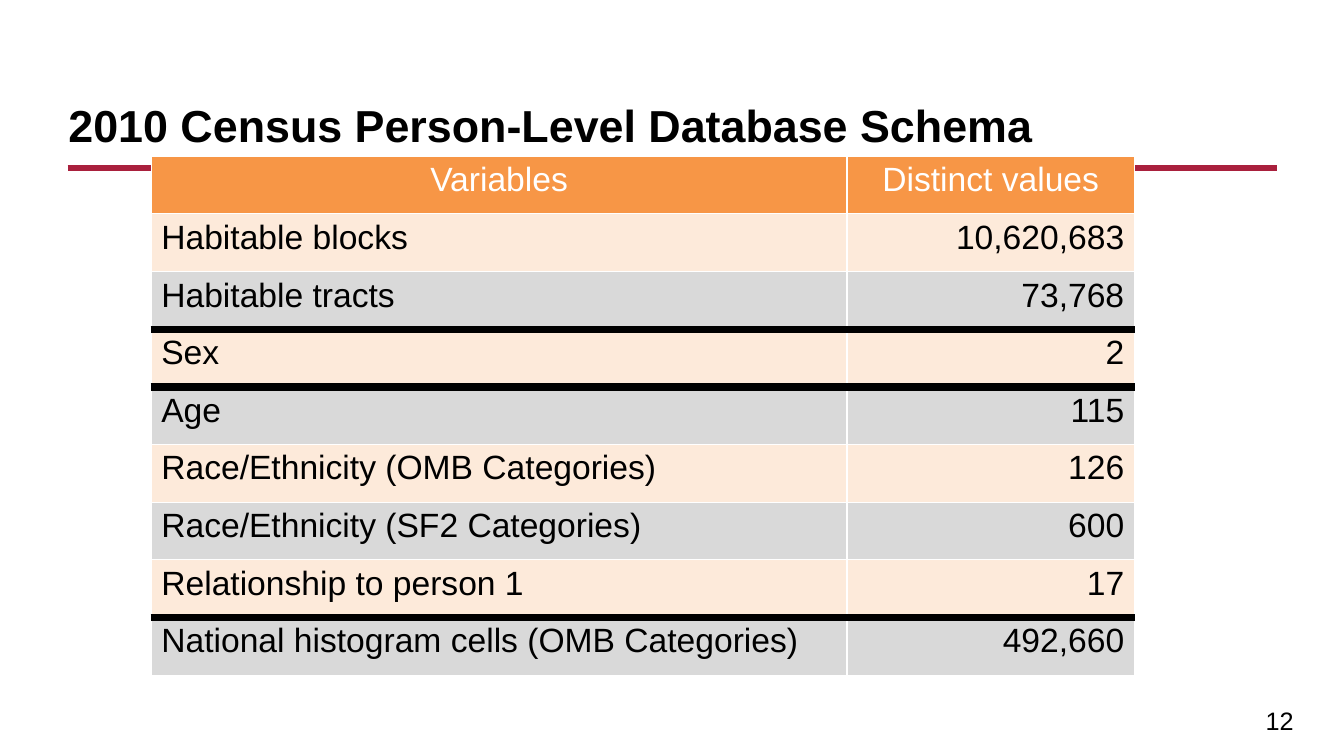
from dataclasses import dataclass

from lxml.etree import SubElement
from pptx import Presentation
from pptx.dml.color import RGBColor
from pptx.enum.shapes import MSO_CONNECTOR
from pptx.enum.text import MSO_ANCHOR, PP_ALIGN
from pptx.oxml.ns import qn
from pptx.slide import Slide
from pptx.table import _Cell
from pptx.text.text import TextFrame
from pptx.util import Inches, Pt


@dataclass(frozen=True)
class Theme:
    font: str = "Arial"
    title_size: int = 32
    table_size: int = 24
    number_size: int = 18
    black: str = "000000"
    white: str = "FFFFFF"
    crimson: str = "A9203D"
    orange: str = "F79646"
    peach: str = "FDEADA"
    gray: str = "D9D9D9"
    grid_width: float = 1
    divider_width: float = 6


@dataclass(frozen=True)
class Variable:
    name: str
    distinct_values: str
    divider_below: bool = False


THEME = Theme()
VARIABLES = [
    Variable("Habitable blocks", "10,620,683"),
    Variable("Habitable tracts", "73,768", divider_below=True),
    Variable("Sex", "2", divider_below=True),
    Variable("Age", "115"),
    Variable("Race/Ethnicity (OMB Categories)", "126"),
    Variable("Race/Ethnicity (SF2 Categories)", "600"),
    Variable("Relationship to person 1", "17", divider_below=True),
    Variable("National histogram cells (OMB Categories)", "492,660"),
]


def write(frame: TextFrame, text: str, size: int, color: str = THEME.black,
          align: PP_ALIGN = PP_ALIGN.LEFT, bold: bool = False) -> None:
    para = frame.paragraphs[0]
    para.text = text
    para.alignment = align
    para.font.name = THEME.font
    para.font.size = Pt(size)
    para.font.bold = bold
    para.font.color.rgb = RGBColor.from_string(color)


def add_text(page: Slide, left: float, top: float, width: float, height: float,
             anchor: MSO_ANCHOR) -> TextFrame:
    box = page.shapes.add_textbox(Inches(left), Inches(top), Inches(width), Inches(height))
    frame = box.text_frame
    frame.word_wrap = True
    frame.vertical_anchor = anchor
    return frame


def set_border(cell: _Cell, side: str, divider: bool = False) -> None:
    width = THEME.divider_width if divider else THEME.grid_width
    color = THEME.black if divider else THEME.white
    line = SubElement(cell._tc.get_or_add_tcPr(), qn(f"a:ln{side}"), w=str(Pt(width)))
    fill = SubElement(line, qn("a:solidFill"))
    SubElement(fill, qn("a:srgbClr"), val=color)


def style_cell(cell: _Cell, fill: str, divider_above: bool, divider_below: bool) -> None:
    set_border(cell, "L")
    set_border(cell, "R")
    set_border(cell, "T", divider_above)
    set_border(cell, "B", divider_below)
    cell.fill.solid()
    cell.fill.fore_color.rgb = RGBColor.from_string(fill)


def add_title_rule(page: Slide) -> None:
    rule = page.shapes.add_connector(
        MSO_CONNECTOR.STRAIGHT, Inches(0.67), Inches(1.67), Inches(12.67), Inches(1.67))
    rule.line.color.rgb = RGBColor.from_string(THEME.crimson)
    rule.line.width = Pt(4.5)
    SubElement(rule._element.spPr, qn("a:effectLst"))


def add_schema_table(page: Slide) -> None:
    rows = [Variable("Variables", "Distinct values"), *VARIABLES]
    table = page.shapes.add_table(
        len(rows), 2, Inches(1.5), Inches(1.55), Inches(9.75), Inches(5.15)).table
    for column, width in zip(table.columns, (6.9, 2.85)):
        column.width = Inches(width)

    divider_above = False
    for index, row in enumerate(rows):
        header = index == 0
        fill = THEME.orange if header else (THEME.gray, THEME.peach)[index % 2]
        color = THEME.white if header else THEME.black
        aligns = (PP_ALIGN.CENTER,) * 2 if header else (PP_ALIGN.LEFT, PP_ALIGN.RIGHT)
        texts = (row.name, row.distinct_values)
        for column, (text, align) in enumerate(zip(texts, aligns)):
            cell = table.cell(index, column)
            style_cell(cell, fill, divider_above, row.divider_below)
            write(cell.text_frame, text, THEME.table_size, color, align)
        divider_above = row.divider_below


def main() -> None:
    deck = Presentation()
    deck.slide_width, deck.slide_height = Inches(13.33), Inches(7.5)
    page = deck.slides.add_slide(deck.slide_layouts[6])

    # Title and the rule beneath it
    add_title_rule(page)
    title = add_text(page, 0.58, 0.3, 12.08, 1.25, MSO_ANCHOR.BOTTOM)
    write(title, "2010 Census Person-Level Database Schema", THEME.title_size, bold=True)

    # Schema table
    add_schema_table(page)

    # Page number
    number = add_text(page, 10.1, 6.95, 2.83, 0.39, MSO_ANCHOR.TOP)
    write(number, "12", THEME.number_size, align=PP_ALIGN.RIGHT)

    deck.save("out.pptx")


if __name__ == "__main__":
    main()
